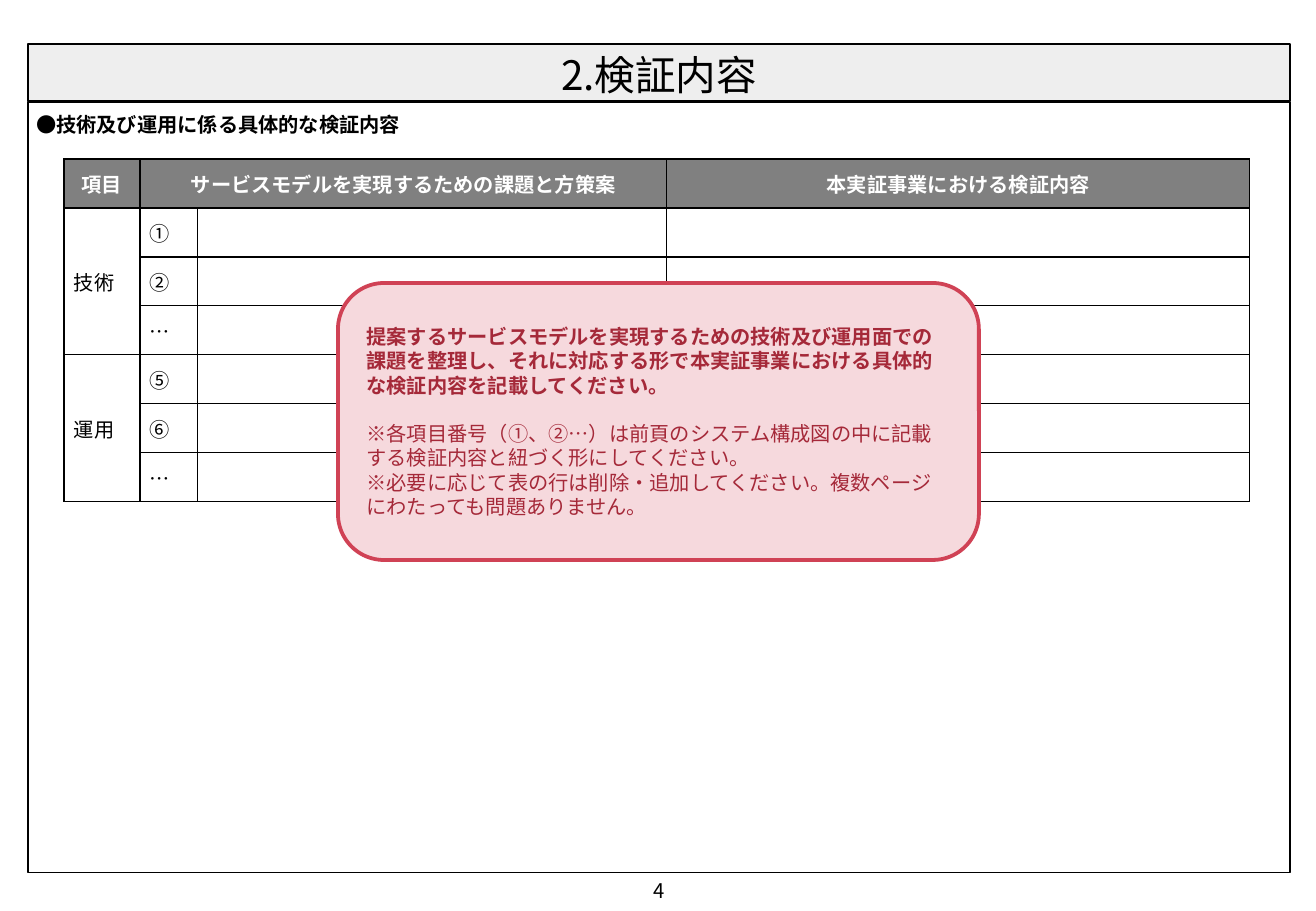
from dataclasses import dataclass

from lxml import etree
from pptx import Presentation
from pptx.dml.color import RGBColor
from pptx.enum.shapes import MSO_SHAPE
from pptx.enum.text import MSO_ANCHOR, MSO_AUTO_SIZE, PP_ALIGN
from pptx.oxml.ns import qn
from pptx.util import Emu, Pt

RECT, ROUNDED = MSO_SHAPE.RECTANGLE, MSO_SHAPE.ROUNDED_RECTANGLE
TOP, MIDDLE = MSO_ANCHOR.TOP, MSO_ANCHOR.MIDDLE
LEFT, CENTER = PP_ALIGN.LEFT, PP_ALIGN.CENTER
NO_FIT = MSO_AUTO_SIZE.NONE

EMU_PER_PX = 7526
COLUMN_WIDTHS = (76, 58, 469, 583)
ROW_HEIGHT = 49
HEADERS = {0: "項目", 1: "サービスモデルを実現するための課題と方策案", 3: "本実証事業における検証内容"}
SECTIONS = (("技術", ("①", "②", "…")), ("運用", ("⑤", "⑥", "…")))
CALLOUT_LEAD = (
    "提案するサービスモデルを実現するための技術及び運用面での課題を整理し、"
    "それに対応する形で本実証事業における具体的な検証内容を記載してください。"
)
CALLOUT_NOTES = (
    "※各項目番号（①、②…）は前頁のシステム構成図の中に記載する検証内容と紐づく形にしてください。",
    "※必要に応じて表の行は削除・追加してください。複数ページにわたっても問題ありません。",
)


@dataclass(frozen=True)
class Theme:
    """Colours, font and type sizes of the slide."""

    font: str = "Noto Sans CJK JP"
    title: float = 24
    body: float = 12
    leading: float = 14.4
    thin: float = 0.75
    thick: float = 2.25
    black: str = "000000"
    white: str = "FFFFFF"
    band: str = "EEEEEE"
    header: str = "808080"
    callout_fill: str = "F6D9DD"
    callout_line: str = "D04255"
    callout_text: str = "A52939"


THEME = Theme()


def px(n):
    """Turn pixels into EMU."""
    return Emu(n * EMU_PER_PX)


def rgb(color):
    """Turn a hex string into a colour."""
    return RGBColor.from_string(color)


def write(p, text, size=THEME.body, color=THEME.black, bold=False, align=LEFT):
    """Write one paragraph in the slide's font."""
    p.text = text
    p.alignment = align
    font = p.font
    font.name, font.size, font.bold = THEME.font, Pt(size), bold
    font.color.rgb = rgb(color)
    etree.SubElement(p._p.pPr.find(qn("a:defRPr")), qn("a:ea"), typeface=THEME.font)


def set_frame(tf, margins, anchor=MIDDLE, wrap=True):
    """Set the insets (left, top, right, bottom), anchor and wrapping."""
    tf.auto_size = NO_FIT
    tf.margin_left, tf.margin_top, tf.margin_right, tf.margin_bottom = map(px, margins)
    tf.vertical_anchor, tf.word_wrap = anchor, wrap


def paint(sp, fill, line, width):
    """Give a shape its fill and outline."""
    sp.fill.solid()
    sp.fill.fore_color.rgb = rgb(fill)
    sp.line.color.rgb = rgb(line)
    sp.line.width = Pt(width)


def add_box(slide, kind, box, fill, line, width):
    """Add a flat preset shape."""
    sp = slide.shapes.add_shape(kind, *map(px, box))
    sp.shadow.inherit = False
    paint(sp, fill, line, width)
    return sp


def add_text(slide, box, text, anchor=TOP, wrap=True, **style):
    """Add a one-paragraph text box without insets."""
    tf = slide.shapes.add_textbox(*map(px, box)).text_frame
    set_frame(tf, (0, 0, 0, 0), anchor, wrap)
    p = tf.paragraphs[0]
    write(p, text, **style)
    p.line_spacing = Pt(THEME.leading)


def set_title(slide, box, text):
    """Place and format the title placeholder."""
    sp = slide.shapes.title
    sp.left, sp.top, sp.width, sp.height = map(px, box)
    paint(sp, THEME.band, THEME.black, THEME.thin)
    set_frame(sp.text_frame, (10, 3, 10, 0))
    write(sp.text_frame.paragraphs[0], text, size=THEME.title, align=CENTER)


def set_borders(cell):
    """Draw a thin border on the four sides of a cell."""
    tcPr = cell._tc.get_or_add_tcPr()
    for i, side in enumerate(("lnL", "lnR", "lnT", "lnB")):
        ln = etree.Element(qn(f"a:{side}"), w=str(Pt(THEME.thin)))
        fill = etree.SubElement(ln, qn("a:solidFill"))
        etree.SubElement(fill, qn("a:srgbClr"), val=THEME.black)
        tcPr.insert(i, ln)


def format_cell(cell, header):
    """Set the fill, insets and borders of a cell."""
    cell.vertical_anchor = MIDDLE
    cell.margin_left = cell.margin_right = px(10)
    cell.margin_top = cell.margin_bottom = px(2)
    if header:
        cell.fill.solid()
        cell.fill.fore_color.rgb = rgb(THEME.header)
    else:
        cell.fill.background()
    set_borders(cell)


def add_plan_table(slide, left, top):
    """Add the table of issues and verification items."""
    rows = 1 + sum(len(marks) for _, marks in SECTIONS)
    size = sum(COLUMN_WIDTHS), rows * ROW_HEIGHT
    shape = slide.shapes.add_table(rows, len(COLUMN_WIDTHS), *map(px, (left, top, *size)))
    table = shape.table
    table.first_row = table.horz_banding = False
    for column, width in zip(table.columns, COLUMN_WIDTHS):
        column.width = px(width)

    texts = {(0, c): text for c, text in HEADERS.items()}
    table.cell(0, 1).merge(table.cell(0, 2))
    first = 1
    for name, marks in SECTIONS:
        texts[first, 0] = name
        texts.update({(first + i, 1): mark for i, mark in enumerate(marks)})
        table.cell(first, 0).merge(table.cell(first + len(marks) - 1, 0))
        first += len(marks)

    for r, row in enumerate(table.rows):
        row.height = px(ROW_HEIGHT)
        header = r == 0
        color, align = (THEME.white, CENTER) if header else (THEME.black, LEFT)
        for c, cell in enumerate(row.cells):
            format_cell(cell, header)
            p = cell.text_frame.paragraphs[0]
            write(p, texts.get((r, c), ""), color=color, bold=header, align=align)


def add_callout(slide, box, lead, notes):
    """Add the rounded instruction box with a bold lead and notes."""
    sp = add_box(slide, ROUNDED, box, THEME.callout_fill, THEME.callout_line, THEME.thick)
    tf = sp.text_frame
    set_frame(tf, (15, 5, 15, 5))
    for i, text in enumerate((lead, *notes)):
        p = tf.add_paragraph() if i else tf.paragraphs[0]
        write(p, text, color=THEME.callout_text, bold=i == 0)
        p.line_spacing = Pt(THEME.leading)
        p.space_before = Pt(THEME.leading if i == 1 else 0)


def main():
    """Build the slide and save it."""
    prs = Presentation()
    prs.slide_width, prs.slide_height = px(1316), px(911)
    slide = prs.slides.add_slide(prs.slide_layouts[5])
    add_text(slide, (628, 873, 62, 34), "4", anchor=MIDDLE, align=CENTER)
    set_title(slide, (28, 44, 1262, 57), "2.検証内容")
    add_box(slide, RECT, (28, 102, 1262, 771), THEME.white, THEME.black, THEME.thin)
    add_text(slide, (36, 112, 368, 24), "●技術及び運用に係る具体的な検証内容", wrap=False, bold=True)
    add_plan_table(slide, 64, 159)
    add_callout(slide, (338, 283, 641, 277), CALLOUT_LEAD, CALLOUT_NOTES)
    prs.save("out.pptx")


if __name__ == "__main__":
    main()
